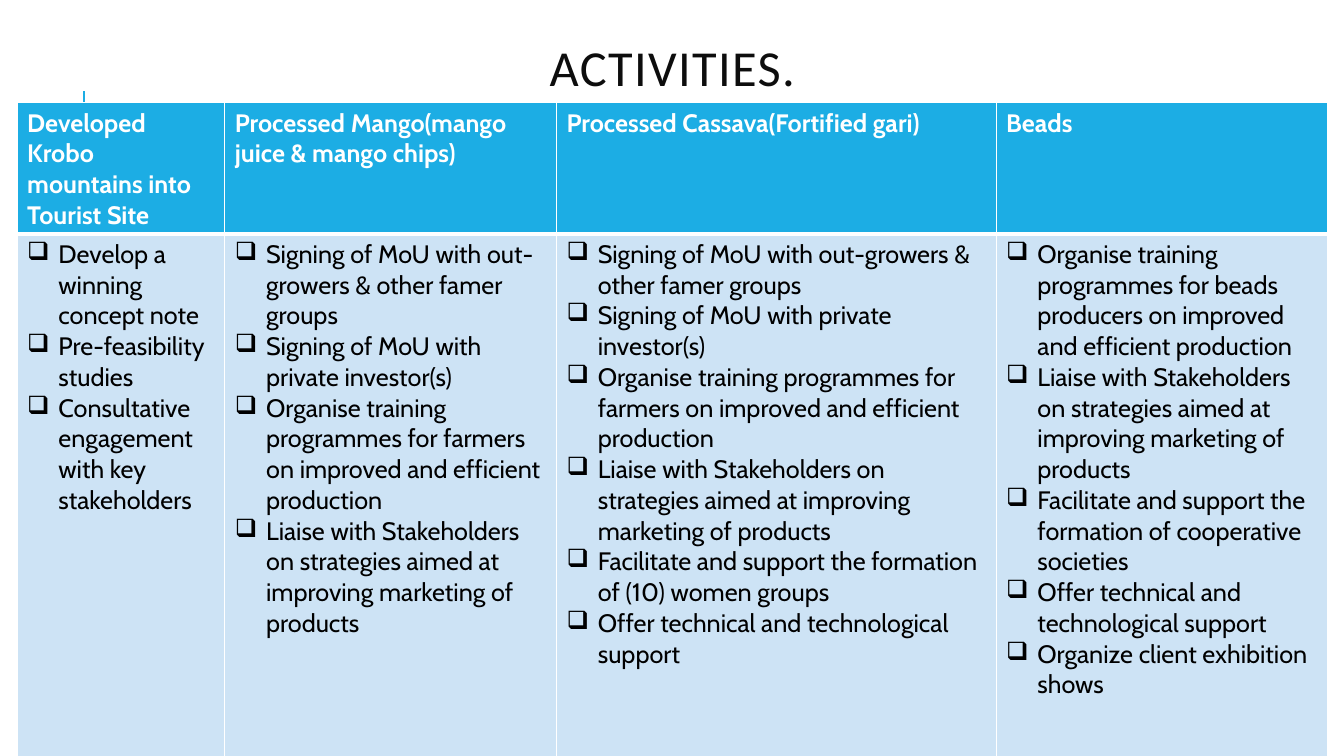
import pptx
import pptx.dml.color
import pptx.enum.shapes
import pptx.enum.text
import pptx.oxml
import pptx.oxml.ns
import pptx.util
from lxml import etree

PX = 9144  # 100 px to the inch
COLORS = {"accent": "1CADE4", "body": "CDE3F5", "white": "FFFFFF",
          "black": "000000", "title": "0D0D0D"}
INDENT = 31 * PX

MOU_GROWERS = "Signing of MoU with out-growers & other famer groups"
MOU_INVESTORS = "Signing of MoU with private investor(s)"
TRAIN_FARMERS = "Organise training programmes for farmers on improved and efficient production"
MARKETING = "Liaise with Stakeholders on strategies aimed at improving marketing of products"
SUPPORT = "Offer technical and technological support"

# (width, heading, activities)
COLUMNS = [
    (206, "Developed Krobo mountains into Tourist Site",
     ["Develop a winning concept note", "Pre-feasibility studies",
      "Consultative engagement with key stakeholders"]),
    (329, "Processed Mango(mango juice & mango chips)",
     [MOU_GROWERS, MOU_INVESTORS, TRAIN_FARMERS, MARKETING]),
    (436, "Processed Cassava(Fortified gari)",
     [MOU_GROWERS, MOU_INVESTORS, TRAIN_FARMERS, MARKETING,
      "Facilitate and support the formation of (10) women groups", SUPPORT]),
    (329, "Beads",
     ["Organise training programmes for beads producers on improved and efficient production",
      MARKETING, "Facilitate and support the formation of cooperative societies",
      SUPPORT, "Organize client exhibition shows"]),
]
ROWS = [
    {"height": 103, "fill": "accent", "text": "white", "bold": True,
     "borders": {"lnL": 1, "lnR": 1, "lnT": 1, "lnB": 3}},
    {"height": 545, "fill": "body", "text": "black", "bold": False,
     "borders": {"lnL": 1, "lnR": 1, "lnT": 3, "lnB": 1}},
]


def rgb(name):
    return pptx.dml.color.RGBColor.from_string(COLORS[name])


def write_run(paragraph, text, color, formats):
    run = paragraph.add_run()
    run.text = text
    run.font.color.rgb = rgb(color)
    for attribute, value in formats.items():
        setattr(run.font, attribute, value)
    return run


presentation = pptx.Presentation()
presentation.slide_width = 1333 * PX
presentation.slide_height = 750 * PX
slide = presentation.slides.add_slide(presentation.slide_layouts[6])

# Accent line
accent_line = slide.shapes.add_connector(
    pptx.enum.shapes.MSO_CONNECTOR.STRAIGHT, 83 * PX, 190 * PX, 83 * PX, 90 * PX)
accent_line.line.color.rgb = rgb("accent")
accent_line.line.width = pptx.util.Pt(1.5)
etree.SubElement(accent_line._element.spPr, pptx.oxml.ns.qn("a:effectLst"))

# Title
title = slide.shapes.add_textbox(92 * PX, 40 * PX, 1150 * PX, 62 * PX)
title.text_frame.word_wrap = True
title.text_frame.vertical_anchor = pptx.enum.text.MSO_ANCHOR.MIDDLE
paragraph = title.text_frame.paragraphs[0]
paragraph.alignment = pptx.enum.text.PP_ALIGN.CENTER
paragraph.line_spacing = 0.8
run = write_run(paragraph, "ACTIVITIES.", "title",
                {"name": "Calibri", "size": pptx.util.Pt(36)})
run.font._element.set("spc", "100")

# Activities table
table = slide.shapes.add_table(
    len(ROWS), len(COLUMNS), 17 * PX, 102 * PX, 1300 * PX, 648 * PX).table
for row_index, row in enumerate(ROWS):
    table.rows[row_index].height = row["height"] * PX
    formats = {"name": "Cabin", "size": pptx.util.Pt(18), "bold": row["bold"]}
    for column_index, (width, heading, activities) in enumerate(COLUMNS):
        table.columns[column_index].width = width * PX
        cell = table.cell(row_index, column_index)
        cell.fill.solid()
        cell.fill.fore_color.rgb = rgb(row["fill"])
        properties = cell._tc.get_or_add_tcPr()
        for position, (side, points) in enumerate(row["borders"].items()):
            border = etree.Element(pptx.oxml.ns.qn("a:" + side), w=str(pptx.util.Pt(points)))
            fill = etree.SubElement(border, pptx.oxml.ns.qn("a:solidFill"))
            etree.SubElement(fill, pptx.oxml.ns.qn("a:srgbClr"), val=COLORS["white"])
            properties.insert(position, border)

        is_header = row_index == 0
        for index, text in enumerate([heading] if is_header else activities):
            frame = cell.text_frame
            paragraph = frame.add_paragraph() if index else frame.paragraphs[0]
            write_run(paragraph, text, row["text"], formats)
            if not is_header:
                bullet_format = paragraph._p.get_or_add_pPr()
                bullet_format.set("marL", str(INDENT))
                bullet_format.set("indent", str(-INDENT))
                etree.SubElement(bullet_format, pptx.oxml.ns.qn("a:buChar"), char="❑")

presentation.save("out.pptx")
